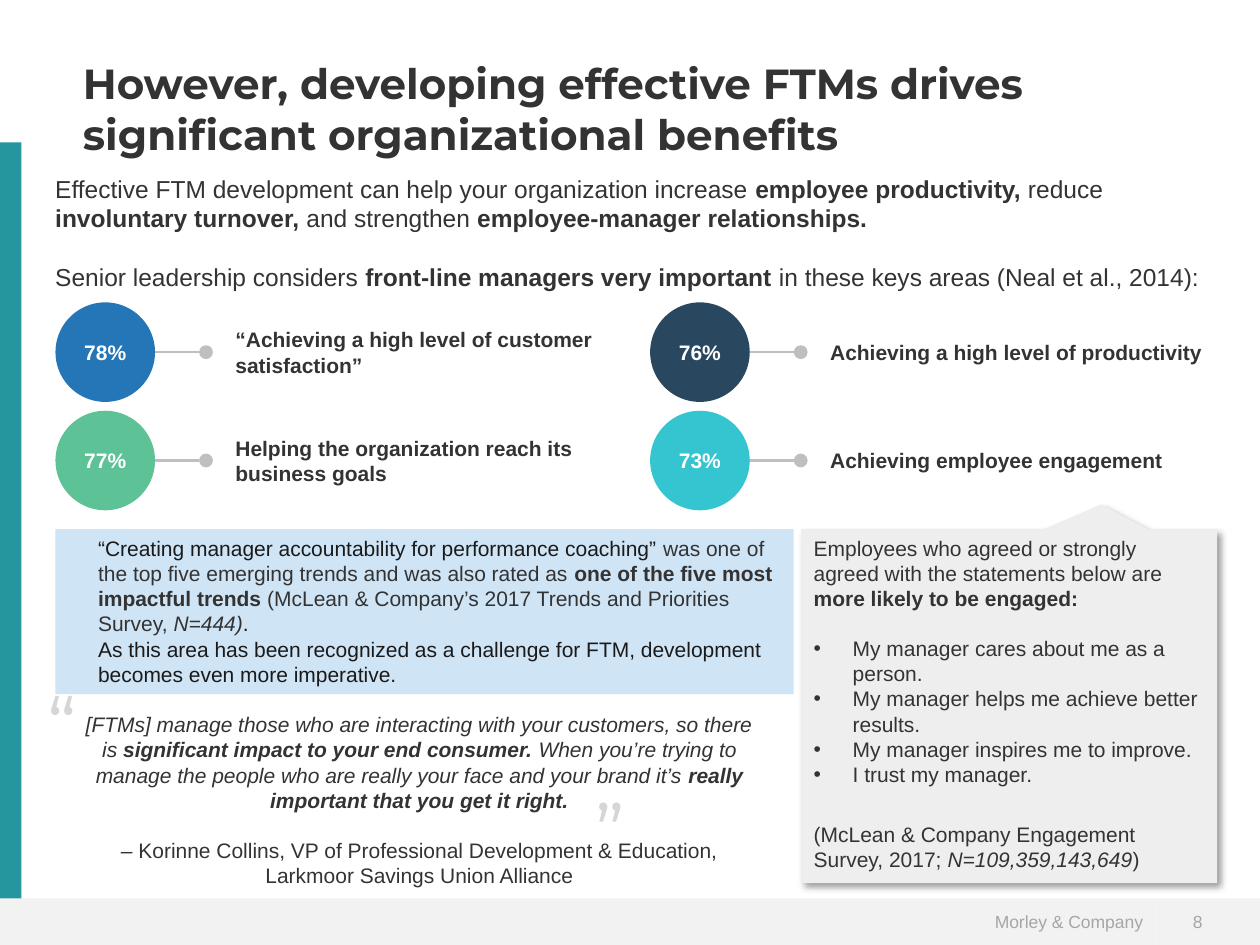
from lxml import etree
from pptx import Presentation
from pptx.dml.color import RGBColor
from pptx.enum.shapes import MSO_CONNECTOR, MSO_SHAPE
from pptx.enum.text import MSO_ANCHOR, PP_ALIGN
from pptx.oxml.ns import qn
from pptx.util import Inches, Pt

RECTANGLE, OVAL = MSO_SHAPE.RECTANGLE, MSO_SHAPE.OVAL
CALLOUT = MSO_SHAPE.RECTANGULAR_CALLOUT
STRAIGHT = MSO_CONNECTOR.STRAIGHT
LEFT, CENTER, RIGHT = PP_ALIGN.LEFT, PP_ALIGN.CENTER, PP_ALIGN.RIGHT
TOP, MIDDLE = MSO_ANCHOR.TOP, MSO_ANCHOR.MIDDLE

INK, BLACK, WHITE = "333333", "1A1A1A", "FFFFFF"
RULE_GRAY, FOOTER_GRAY, FOOTER_TEXT = "BFBFBF", "F2F2F2", "A6A6A6"
CIRCLE = 0.79
DOT = 0.11

METRICS = [
    [("78%", "2576B7", "“Achieving a high level of customer satisfaction”"),
     ("76%", "29475F", "Achieving a high level of productivity")],
    [("77%", "5DC295", "Helping the organization reach its business goals"),
     ("73%", "34C5D0", "Achieving employee engagement")],
]
STATEMENTS = [
    "My manager cares about me as a person.",
    "My manager helps me achieve better results.",
    "My manager inspires me to improve.",
    "I trust my manager.",
]


def rgb(color):
    return RGBColor.from_string(color)


def add_panel(shapes, kind, area, color):
    panel = shapes.add_shape(kind, *map(Inches, area))
    panel.shadow.inherit = False
    panel.fill.solid()
    panel.fill.fore_color.rgb = rgb(color)
    panel.line.fill.background()
    return panel


def add_text_box(shapes, area, anchor=TOP):
    box = shapes.add_textbox(*map(Inches, area))
    prepare_frame(box, anchor)
    return box


def prepare_frame(box, anchor):
    box.text_frame.word_wrap = True
    box.text_frame.vertical_anchor = anchor


def write(para, spans, size=12, color=INK, font="Arial", align=LEFT,
          before=0, margin=0, bullet=None):
    properties = para._p.get_or_add_pPr()
    if margin:
        properties.set("marL", str(Inches(margin)))
    if bullet:
        properties.set("indent", str(-Inches(margin)))
        etree.SubElement(properties, qn("a:buFont")).set("typeface", "Arial")
        etree.SubElement(properties, qn("a:buChar")).set("char", bullet)
    para.alignment = align
    if before:
        para.space_before = Pt(before)
    for text, style, *own_color in spans:
        span = para.add_run()
        span.text = text
        span.font.name = font
        span.font.size = Pt(size)
        span.font.bold = "b" in style
        span.font.italic = "i" in style
        span.font.color.rgb = rgb(own_color[0] if own_color else color)


def add_metric(page, left, top, percent, color, label):
    shapes = page.shapes.add_group_shape().shapes
    middle = top + CIRCLE / 2
    dot_left = left + 1.14
    rule = shapes.add_connector(STRAIGHT, Inches(left + CIRCLE / 2), Inches(middle),
                                Inches(dot_left), Inches(middle))
    rule.line.color.rgb = rgb(RULE_GRAY)
    rule.line.width = Pt(1.5)
    etree.SubElement(rule._element.spPr, qn("a:effectLst"))
    add_panel(shapes, OVAL, (dot_left, middle - DOT / 2, DOT, DOT), RULE_GRAY)
    circle = add_panel(shapes, OVAL, (left, top, CIRCLE, CIRCLE), color)
    prepare_frame(circle, MIDDLE)
    write(circle.text_frame.paragraphs[0], [(percent, "b")], color=WHITE, align=CENTER)
    box = add_text_box(shapes, (left + 1.33, middle - 0.25, 3.18, 0.5), MIDDLE)
    write(box.text_frame.paragraphs[0], [(label, "b")])


def add_footer(page):
    for area, text, align, margin in [
        ((0, 7.13, 9.17, 0.37), "Morley & Company", RIGHT, 0),
        ((9.17, 7.13, 0.83, 0.37), "8", LEFT, 0.2),
    ]:
        panel = add_panel(page.shapes, RECTANGLE, area, FOOTER_GRAY)
        prepare_frame(panel, MIDDLE)
        write(panel.text_frame.paragraphs[0], [(text, "")], size=10,
              color=FOOTER_TEXT, align=align, margin=margin)


def add_heading(page):
    title = add_text_box(page.shapes, (0.56, 0.41, 8.89, 0.94))
    write(title.text_frame.paragraphs[0],
          [("However, developing effective FTMs drives significant "
            "organizational benefits", "b")], size=24, font="Montserrat")
    intro = add_text_box(page.shapes, (0.34, 1.33, 9.33, 1.04)).text_frame
    write(intro.paragraphs[0], [
        ("Effective FTM development can help your organization increase ", ""),
        ("employee productivity, ", "b"),
        ("reduce ", ""),
        ("involuntary turnover, ", "b"),
        ("and strengthen ", ""),
        ("employee-manager relationships.", "b"),
    ], size=14)
    write(intro.add_paragraph(), [
        ("Senior leadership considers ", ""),
        ("front-line managers very important ", "b"),
        ("in these keys areas (Neal et al., 2014):", ""),
    ], size=14, before=17)


def add_quote(page):
    frame = add_text_box(page.shapes, (0.56, 5.6, 5.54, 1.51)).text_frame
    write(frame.paragraphs[0], [
        ("[FTMs] manage those who are interacting with your customers, so there is ", "i"),
        ("significant impact to your end consumer. ", "bi"),
        ("When you’re trying to manage the people who are really your face "
         "and your brand it’s ", "i"),
        ("really important that you get it right.", "bi"),
    ], align=CENTER)
    write(frame.add_paragraph(), [
        ("– ", "i"),
        ("Korinne Collins, VP of Professional Development & Education, "
         "Larkmoor Savings Union Alliance", ""),
    ], align=CENTER, before=14)
    for mark, area, inset in [("“", (0.28, 5.52, 0.42, 0.6), 0),
                              ("”", (4.63, 6.32, 0.42, 0.69), 0.05)]:
        box = add_text_box(page.shapes, area)
        box.text_frame.margin_left = box.text_frame.margin_right = 0
        box.text_frame.margin_top = box.text_frame.margin_bottom = Inches(inset)
        para = box.text_frame.paragraphs[0]
        write(para, [(mark, "")], size=44, color="D6D6D6", font="Montserrat", align=CENTER)
        para.line_spacing = Pt(42)


def add_trend_panel(page):
    panel = add_panel(page.shapes, RECTANGLE, (0.44, 4.2, 5.86, 1.31), "CFE4F5")
    prepare_frame(panel, TOP)
    frame = panel.text_frame
    write(frame.paragraphs[0], [
        ("“Creating manager accountability for performance coaching” ", "", BLACK),
        ("was one of the top five emerging trends and was also rated as ", ""),
        ("one of the five most impactful trends", "b"),
        (" (McLean & Company’s 2017 Trends and Priorities Survey, ", ""),
        ("N=444)", "i"),
        (".", "", BLACK),
    ], margin=0.24)
    write(frame.add_paragraph(), [
        ("As this area has been recognized as a challenge for FTM, development "
         "becomes even more imperative.", "")], color=BLACK, margin=0.24)


def add_engagement_callout(page):
    callout = add_panel(page.shapes, CALLOUT, (6.36, 4.2, 3.3, 2.81), "EEEEEE")
    callout.adjustments[0] = 0.222
    callout.adjustments[1] = -0.57
    effects = callout._element.spPr.find(qn("a:effectLst"))
    shadow = etree.SubElement(effects, qn("a:outerShdw"), blurRad=str(Pt(4)),
                              dist=str(Pt(3)), dir="2700000", algn="tl", rotWithShape="0")
    tint = etree.SubElement(shadow, qn("a:srgbClr"), val="000000")
    etree.SubElement(tint, qn("a:alpha"), val="40000")
    prepare_frame(callout, TOP)
    frame = callout.text_frame
    write(frame.paragraphs[0], [
        ("Employees who agreed or strongly agreed with the statements below are ", ""),
        ("more likely to be engaged:", "b"),
    ])
    for index, statement in enumerate(STATEMENTS):
        write(frame.add_paragraph(), [(statement, "")], margin=0.31, bullet="•",
              before=0 if index else 14)
    write(frame.add_paragraph(), [
        ("(McLean & Company Engagement Survey, 2017; ", ""),
        ("N=109,359,143,649", "i"),
        (")", ""),
    ], before=20)


def main():
    deck = Presentation()
    deck.slide_width, deck.slide_height = Inches(10), Inches(7.5)
    page = deck.slides.add_slide(deck.slide_layouts[6])
    add_footer(page)
    add_panel(page.shapes, RECTANGLE, (0, 1.13, 0.17, 6), "25969E")
    add_heading(page)
    add_quote(page)
    for row, metrics in enumerate(METRICS):
        for column, metric in enumerate(metrics):
            add_metric(page, 0.44 + 4.72 * column, 2.4 + 0.86 * row, *metric)
    add_engagement_callout(page)
    add_trend_panel(page)
    deck.save("out.pptx")


if __name__ == "__main__":
    main()
